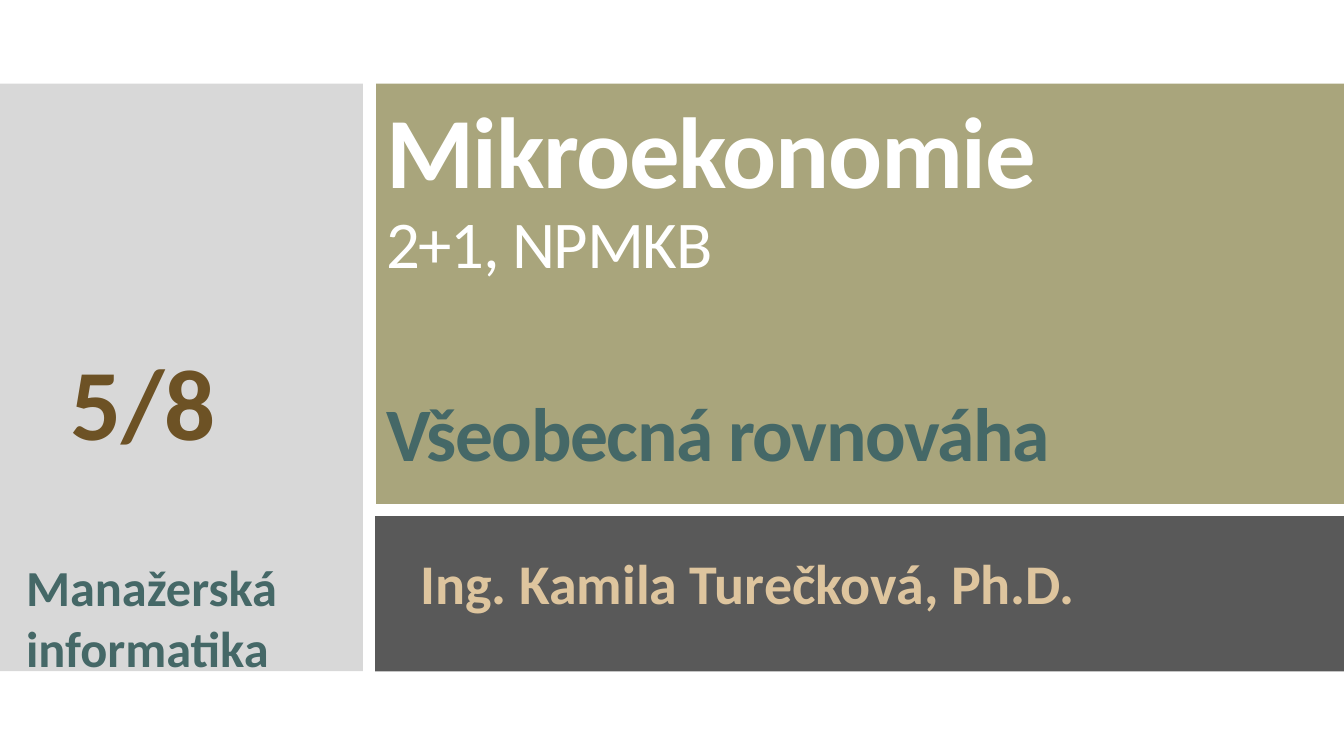
from pptx import Presentation
from pptx.dml.color import RGBColor
from pptx.enum.shapes import MSO_SHAPE
from pptx.enum.text import MSO_ANCHOR, MSO_AUTO_SIZE, PP_ALIGN
from pptx.util import Inches, Pt

TEAL = "456867"


def rgb(value):
    """Turn a hex string into a colour."""
    return RGBColor.from_string(value)


def add_panel(s, box, color):
    """Draw a flat rectangle filling the box."""
    sp = s.shapes.add_shape(MSO_SHAPE.RECTANGLE, *map(Inches, box))
    sp.shadow.inherit = False
    sp.fill.solid()
    sp.fill.fore_color.rgb = rgb(color)
    sp.line.fill.background()


def add_line(p, text, size, color, bold=True, spacing=1.0, tracking=0):
    """Write one run into a left-aligned paragraph."""
    p.alignment = PP_ALIGN.LEFT
    p.line_spacing = spacing
    r = p.add_run()
    r.text = text
    r.font.name = "Calibri"
    r.font.size = Pt(size)
    r.font.bold = bold
    r.font.color.rgb = rgb(color)
    if tracking:
        r._r.get_or_add_rPr().set("spc", str(tracking))


def add_label(s, box, text, size, color, spacing):
    """Place a wrapping text box with one paragraph."""
    tf = s.shapes.add_textbox(*map(Inches, box)).text_frame
    tf.word_wrap = True
    add_line(tf.paragraphs[0], text, size, color, spacing=spacing)


def add_sidebar(s, x, y, w, h):
    """Build the grey column with lecture number and programme."""
    add_panel(s, (x, y, w, h), "D8D8D8")
    add_label(s, (x + 0.6, y + 2.72, 2.63, 1.09), "5/8", 72, "6D5225", 0.8)
    add_label(s, (x + 0.16, y + 4.64, 3.07, 1.31),
              "Manažerská informatika", 36, TEAL, 1.0)


def add_title(s, x, y, w, h):
    """Build the olive panel with course, code and topic."""
    add_panel(s, (x, y, w, h), "A9A57C")
    title = s.shapes.title
    s.shapes.element.append(title._element)
    title.left, title.top = Inches(x), Inches(y + 0.61)
    title.width, title.height = Inches(w), Inches(3.35)
    tf = title.text_frame
    tf.auto_size = MSO_AUTO_SIZE.NONE
    tf.word_wrap = True
    tf.vertical_anchor = MSO_ANCHOR.BOTTOM
    lines = [("Mikroekonomie", 72, "FFFFFF", True, 0),
             ("2+1, NPMKB", 47.7, "FFFFFF", False, 0),
             ("Všeobecná rovnováha", 54, TEAL, True, 81)]
    for i, (text, size, color, bold, gap) in enumerate(lines):
        p = tf.add_paragraph() if i else tf.paragraphs[0]
        p.space_before = Pt(gap)
        add_line(p, text, size, color, bold, 0.9, -100)


def add_author(s, x, y, w, h):
    """Build the dark panel with the lecturer."""
    add_panel(s, (x, y, w, h), "595959")
    add_label(s, (x + 0.35, y + 0.35, 7.86, 0.84),
              "Ing. Kamila Turečková, Ph.D.", 40, "DEC59E", 0.9)


def main():
    """Build and save the title slide."""
    prs = Presentation()
    prs.slide_width, prs.slide_height = Inches(13.33), Inches(7.5)
    s = prs.slides.add_slide(prs.slide_layouts[5])
    add_sidebar(s, 0, 0.83, 3.6, 5.83)
    add_title(s, 3.73, 0.83, 9.6, 4.17)
    add_author(s, 3.72, 5.12, 9.61, 1.54)
    prs.save("out.pptx")


if __name__ == "__main__":
    main()
